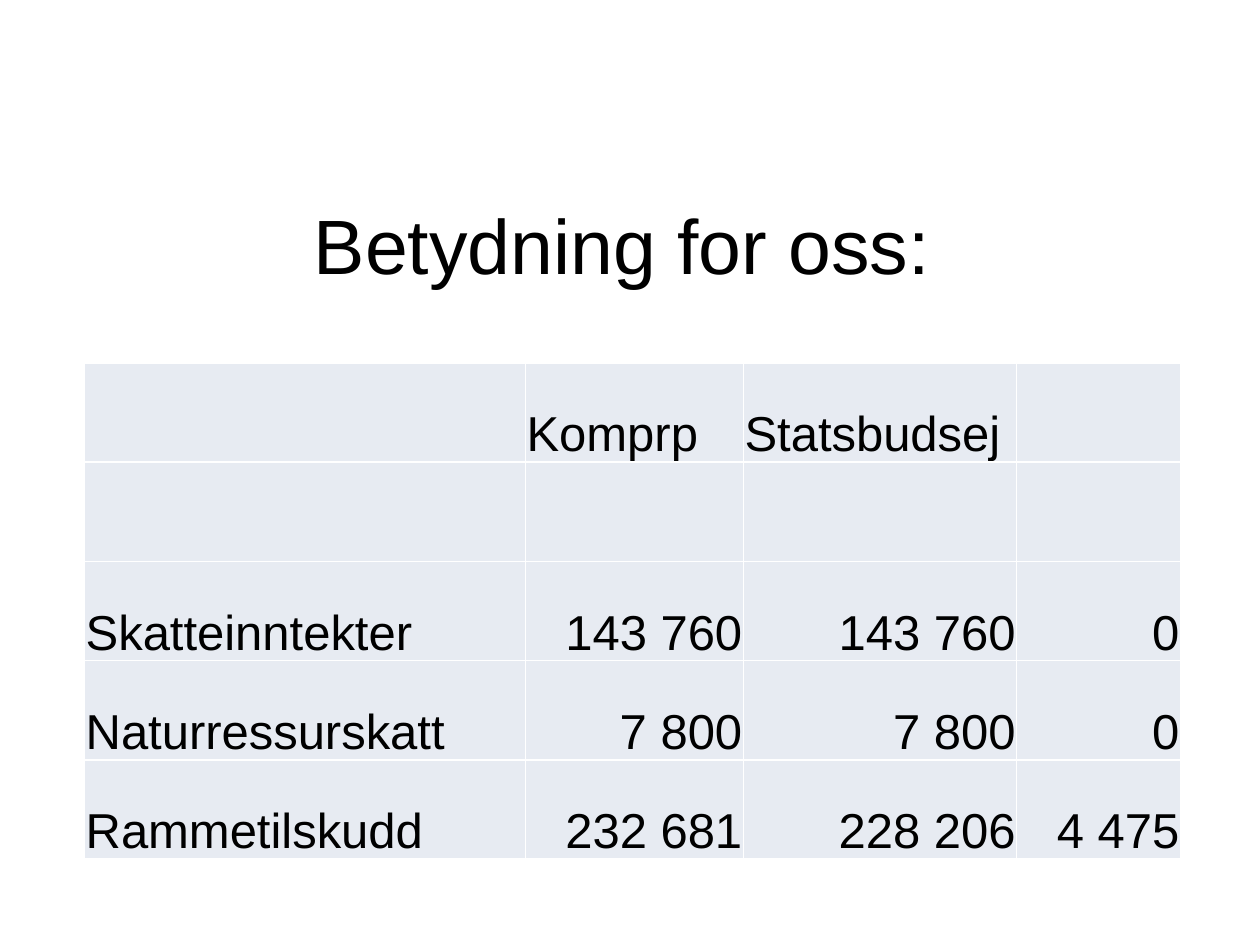
from dataclasses import dataclass

from lxml.etree import SubElement
from pptx import Presentation
from pptx.dml.color import RGBColor
from pptx.enum.text import MSO_ANCHOR, PP_ALIGN
from pptx.oxml.ns import qn
from pptx.util import Inches, Pt


@dataclass(frozen=True)
class Theme:
    font: str = "Arial"
    text: str = "000000"
    cell: str = "E7EBF2"
    border: str = "FFFFFF"
    border_width: int = 1
    title_size: int = 44
    table_size: int = 28


THEME = Theme()
COLUMN_WIDTHS = (3.5, 1.73, 2.17, 1.3)
BUDGET_ROWS = (
    ("", "Komprp", "Statsbudsej", ""),
    ("", "", "", ""),
    ("Skatteinntekter", "143 760", "143 760", "0"),
    ("Naturressurskatt", "7 800", "7 800", "0"),
    ("Rammetilskudd", "232 681", "228 206", "4 475"),
)


def write_text(text_frame, text, *, size, align=PP_ALIGN.LEFT, line_spacing=None):
    paragraph = text_frame.paragraphs[0]
    paragraph.alignment = align
    paragraph.line_spacing = line_spacing
    paragraph.font.size = Pt(size)
    if text:
        run = paragraph.add_run()
        run.text = text
        run.font.name = THEME.font
        run.font.size = Pt(size)
        run.font.color.rgb = RGBColor.from_string(THEME.text)


def set_borders(cell):
    properties = cell._tc.get_or_add_tcPr()
    for position, side in enumerate(("lnL", "lnR", "lnT", "lnB")):
        line = SubElement(properties, qn(f"a:{side}"), w=str(Pt(THEME.border_width)))
        fill = SubElement(line, qn("a:solidFill"))
        SubElement(fill, qn("a:srgbClr"), val=THEME.border)
        properties.insert(position, line)


def add_title(slide, left, top, width, height):
    shape = slide.shapes.add_textbox(left, top, width, height)
    text_frame = shape.text_frame
    text_frame.word_wrap = True
    text_frame.vertical_anchor = MSO_ANCHOR.MIDDLE
    write_text(text_frame, "Betydning for oss:", size=THEME.title_size,
               align=PP_ALIGN.CENTER, line_spacing=0.9)


def style_cell(cell):
    cell.fill.solid()
    cell.fill.fore_color.rgb = RGBColor.from_string(THEME.cell)
    cell.vertical_anchor = MSO_ANCHOR.BOTTOM
    cell.margin_left = cell.margin_right = cell.margin_top = Inches(0.01)
    cell.margin_bottom = 0
    set_borders(cell)


def add_budget_table(slide, left, top, width, height):
    table = slide.shapes.add_table(
        len(BUDGET_ROWS), len(COLUMN_WIDTHS), left, top, width, height
    ).table
    table.first_row = table.horz_banding = False
    for column, share in zip(table.columns, COLUMN_WIDTHS):
        column.width = int(width * share / sum(COLUMN_WIDTHS))
    for row_index, row in enumerate(BUDGET_ROWS):
        for column_index, text in enumerate(row):
            cell = table.cell(row_index, column_index)
            style_cell(cell)
            is_number = row_index > 1 and column_index > 0
            write_text(cell.text_frame, text, size=THEME.table_size,
                       align=PP_ALIGN.RIGHT if is_number else PP_ALIGN.LEFT)


def main():
    presentation = Presentation()
    presentation.slide_width = Inches(10)
    presentation.slide_height = Inches(7.5)
    slide = presentation.slides.add_slide(presentation.slide_layouts[6])
    add_title(slide, Inches(0.51), Inches(1.47), Inches(8.86), Inches(1.02))
    add_budget_table(slide, Inches(0.67), Inches(2.88), Inches(8.7), Inches(3.94))
    presentation.save("out.pptx")


if __name__ == "__main__":
    main()
